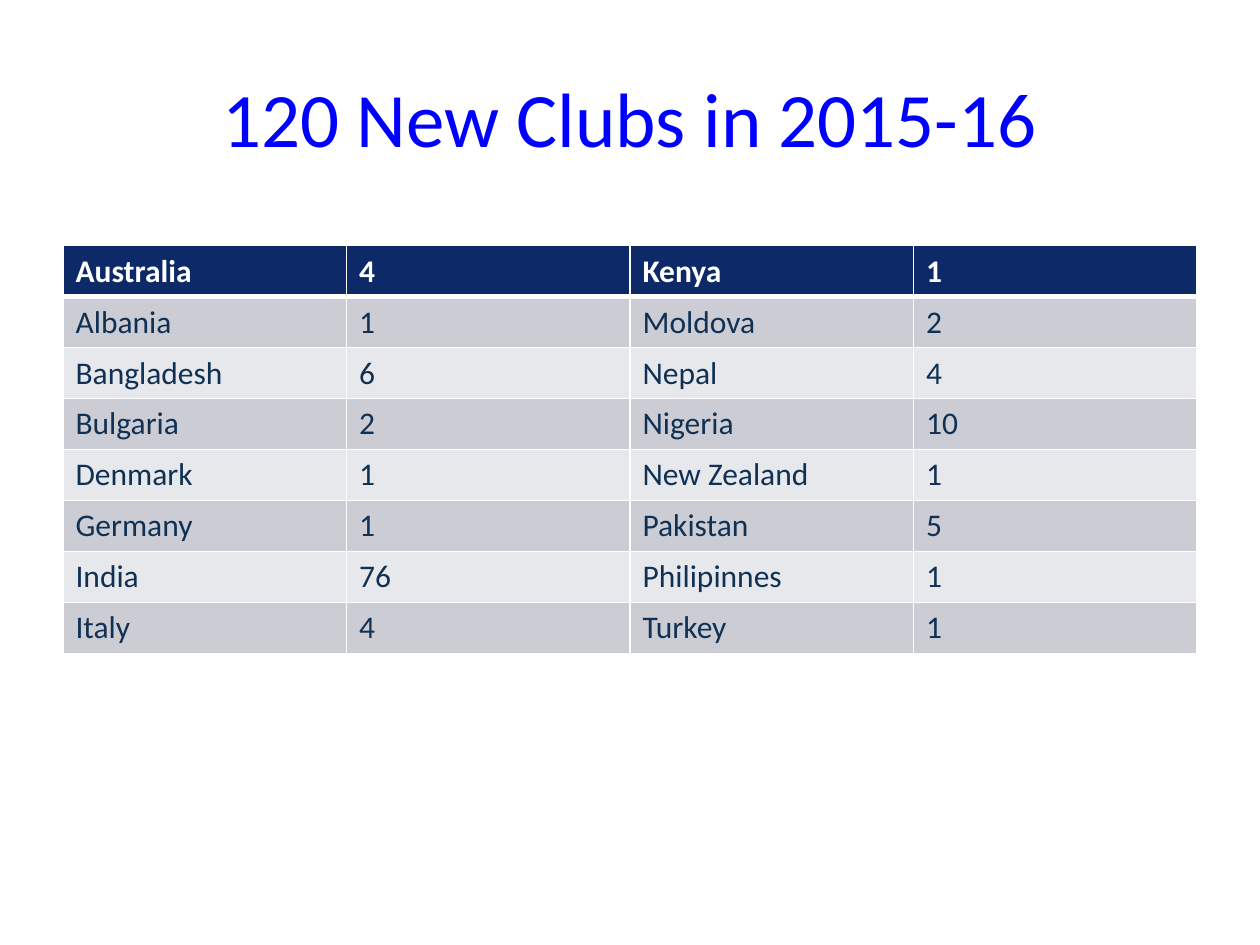
import pptx
import pptx.util
import pptx.dml.color
import pptx.enum.text
import pptx.oxml
import pptx.oxml.ns

Inches, Pt = pptx.util.Inches, pptx.util.Pt

# Content
TITLE = "120 New Clubs in 2015-16"
CLUBS = [
    ("Australia", "4", "Kenya", "1"),
    ("Albania", "1", "Moldova", "2"),
    ("Bangladesh", "6", "Nepal", "4"),
    ("Bulgaria", "2", "Nigeria", "10"),
    ("Denmark", "1", "New Zealand", "1"),
    ("Germany", "1", "Pakistan", "5"),
    ("India", "76", "Philipinnes", "1"),
    ("Italy", "4", "Turkey", "1"),
]
COLORS = {
    "title": "0000FF",
    "header": "0D2968",
    "header_text": "FFFFFF",
    "odd_row": "CCCDD4",
    "even_row": "E7E8EB",
    "body_text": "103154",
    "border": "FFFFFF",
}
FONT = "Calibri"


def rgb(name):
    return pptx.dml.color.RGBColor.from_string(COLORS[name])


def add_run(paragraph, text, size, color, bold=False):
    run = paragraph.add_run()
    run.text = text
    run.font.name = FONT
    run.font.size = Pt(size)
    run.font.bold = bold
    run.font.color.rgb = rgb(color)


def set_borders(cell, widths):
    properties = cell._tc.get_or_add_tcPr()
    for side, width in widths.items():
        properties.append(pptx.oxml.parse_xml(
            f'<a:ln{side} {pptx.oxml.ns.nsdecls("a")} w="{Pt(width)}">'
            f'<a:solidFill><a:srgbClr val="{COLORS["border"]}"/></a:solidFill>'
            f'</a:ln{side}>'))


def add_title(slide):
    title = slide.shapes.add_textbox(Inches(0.5), Inches(0.3), Inches(9), Inches(1.25))
    frame = title.text_frame
    frame.word_wrap = True
    frame.vertical_anchor = pptx.enum.text.MSO_ANCHOR.MIDDLE
    paragraph = frame.paragraphs[0]
    paragraph.alignment = pptx.enum.text.PP_ALIGN.CENTER
    add_run(paragraph, TITLE, 44, "title")


def add_club_table(slide):
    table = slide.shapes.add_table(
        len(CLUBS), len(CLUBS[0]),
        Inches(0.5), Inches(1.95), Inches(9), Inches(3.24)).table
    for row_index, row in enumerate(CLUBS):
        is_header = row_index == 0
        if is_header:
            fill = "header"
        else:
            fill = "odd_row" if row_index % 2 else "even_row"
        widths = {"L": 1, "R": 1,
                  "T": 3 if row_index == 1 else 1,
                  "B": 3 if is_header else 1}
        for column_index, text in enumerate(row):
            cell = table.cell(row_index, column_index)
            set_borders(cell, widths)
            cell.fill.solid()
            cell.fill.fore_color.rgb = rgb(fill)
            add_run(cell.text_frame.paragraphs[0], text, 18,
                    "header_text" if is_header else "body_text", is_header)


def main():
    presentation = pptx.Presentation()
    presentation.slide_width = Inches(10)
    presentation.slide_height = Inches(7.5)
    slide = presentation.slides.add_slide(presentation.slide_layouts[6])
    add_title(slide)
    add_club_table(slide)
    presentation.save("out.pptx")


if __name__ == "__main__":
    main()
